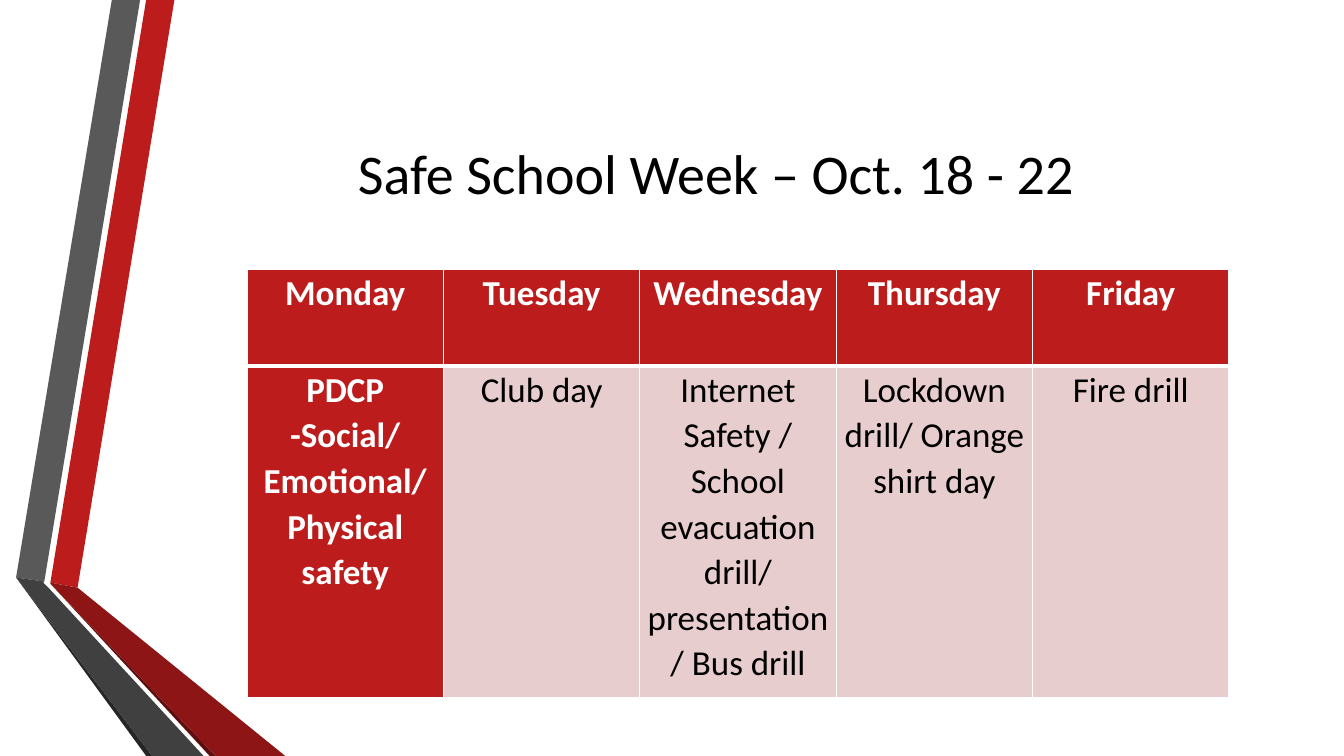
import pptx
import pptx.dml.color
import pptx.enum.text
import pptx.oxml
import pptx.oxml.ns
import pptx.util
from dataclasses import dataclass

Inches = pptx.util.Inches


@dataclass(frozen=True)
class Theme:
    font: str = "Calibri"
    title_size: int = 40
    table_size: int = 25
    black: str = "000000"
    white: str = "FFFFFF"
    red: str = "BC1C1C"
    pink: str = "E7CDCD"
    gray: str = "595959"
    dark_gray: str = "404040"
    gray_shade: str = "262626"
    dark_red: str = "8D1515"
    red_shade: str = "5E0E0E"


def rgb(color):
    return pptx.dml.color.RGBColor.from_string(color)


def apply(target, formats):
    for name, value in formats.items():
        setattr(target, name, value)


class PageBuilder:
    def __init__(self, page, theme):
        self.page = page
        self.theme = theme

    def ribbon(self, color, points):
        corners = [(Inches(x), Inches(y)) for x, y in points]
        builder = self.page.shapes.build_freeform(*corners[0], scale=1.0)
        builder.add_line_segments(corners[1:], close=True)
        shape = builder.convert_to_shape()
        shape.shadow.inherit = False
        shape.fill.solid()
        shape.fill.fore_color.rgb = rgb(color)
        shape.line.fill.background()

    def centered_text(self, frame, text, size, color, bold=False, spacing=1.0):
        para = frame.paragraphs[0]
        apply(para, {"alignment": pptx.enum.text.PP_ALIGN.CENTER, "line_spacing": spacing})
        span = para.add_run()
        span.text = text
        apply(span.font, {"name": self.theme.font, "size": pptx.util.Pt(size), "bold": bold})
        span.font.color.rgb = rgb(color)

    def title(self, text, left, top, width, height):
        box = self.page.shapes.add_textbox(*map(Inches, (left, top, width, height)))
        apply(box.text_frame, {
            "word_wrap": True,
            "vertical_anchor": pptx.enum.text.MSO_ANCHOR.MIDDLE,
        })
        self.centered_text(box.text_frame, text, self.theme.title_size, self.theme.black)

    def borders(self, cell, widths):
        properties = cell._tc.get_or_add_tcPr()
        for side, width in widths.items():
            properties.append(pptx.oxml.parse_xml(
                f'<a:ln{side} {pptx.oxml.ns.nsdecls("a")} w="{pptx.util.Pt(width)}">'
                f'<a:solidFill><a:srgbClr val="{self.theme.white}"/></a:solidFill>'
                f'</a:ln{side}>'
            ))

    def schedule(self, rows, left, top, width, heights):
        theme = self.theme
        columns = len(rows[0])
        table = self.page.shapes.add_table(
            len(rows), columns, *map(Inches, (left, top, width, sum(heights)))
        ).table
        apply(table, {"first_row": False, "horz_banding": False})
        for column in table.columns:
            column.width = Inches(width / columns)
        for r, (texts, height) in enumerate(zip(rows, heights)):
            table.rows[r].height = Inches(height)
            for c, text in enumerate(texts):
                cell = table.cell(r, c)
                header = r == 0
                accent = header or c == 0
                apply(cell, {
                    "margin_left": Inches(0.07),
                    "margin_right": Inches(0.07),
                    "margin_top": 0,
                    "margin_bottom": 0,
                })
                self.borders(cell, {
                    "L": 1, "R": 1, "T": 1 if header else 3, "B": 3 if header else 1,
                })
                cell.fill.solid()
                cell.fill.fore_color.rgb = rgb(theme.red if accent else theme.pink)
                self.centered_text(cell.text_frame, text, theme.table_size,
                                   theme.white if accent else theme.black, accent, 1.07)


def main():
    theme = Theme()
    deck = pptx.Presentation()
    apply(deck, {"slide_width": Inches(13.33), "slide_height": Inches(7.5)})
    builder = PageBuilder(deck.slides.add_slide(deck.slide_layouts[6]), theme)

    ribbons = [
        (theme.red, [(0.5, 5.78), (0.77, 5.83), (1.73, 0), (1.45, 0)]),
        (theme.gray, [(1.39, 0), (1.11, 0), (0.16, 5.73), (0.44, 5.77)]),
        (theme.gray_shade, [(0.16, 5.73), (1.45, 7.5), (1.51, 7.5)]),
        (theme.red_shade, [(0.5, 5.79), (2.08, 7.5), (2.14, 7.5)]),
        (theme.dark_red, [(0.5, 5.78), (0.5, 5.79), (2.14, 7.5), (2.83, 7.5), (0.77, 5.83)]),
        (theme.dark_gray, [(0.16, 5.73), (1.51, 7.5), (2.02, 7.5), (0.48, 5.83),
                           (0.43, 5.78), (0.44, 5.77)]),
    ]
    for color, points in ribbons:
        builder.ribbon(color, points)

    builder.title("Safe School Week – Oct. 18 - 22", 1.62, 0.75, 10.96, 1.92)
    builder.schedule([
        ["Monday", "Tuesday", "Wednesday", "Thursday", "Friday"],
        ["PDCP -Social/ Emotional/ Physical safety", "Club day",
         "Internet Safety / School evacuation drill/ presentation / Bus drill",
         "Lockdown drill/ Orange shirt day", "Fire drill"],
    ], 2.45, 2.67, 9.74, [0.96, 3.29])
    deck.save("out.pptx")


if __name__ == "__main__":
    main()
